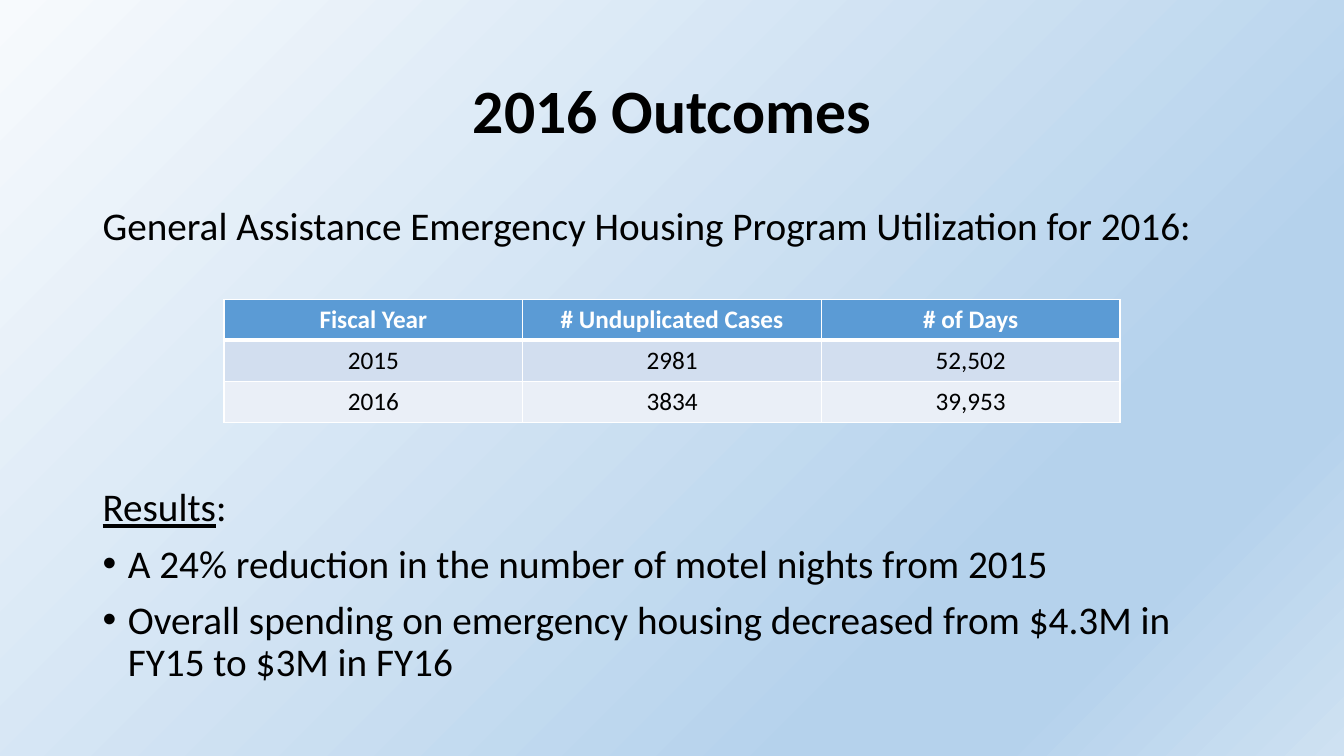
from lxml.etree import SubElement
from pptx import Presentation
from pptx.dml.color import RGBColor
from pptx.enum.text import MSO_ANCHOR as Anchor, PP_ALIGN as Align
from pptx.oxml.ns import qn
from pptx.util import Emu, Inches, Pt

COLORS = {
    "text": "000000", "white": "FFFFFF", "header": "5B9BD5",
    "odd_row": "D2DEEF", "even_row": "EAEFF7",
    "sky_light": "F7FAFD", "sky": "B5D2EC", "sky_end": "CEE1F2",
}
SKY_STOPS = [(0, "sky_light"), (74, "sky"), (83, "sky"), (100, "sky_end")]
CASES = [
    ["Fiscal Year", "# Unduplicated Cases", "# of Days"],
    ["2015", "2981", "52,502"],
    ["2016", "3834", "39,953"],
]
RESULTS = [
    "A 24% reduction in the number of motel nights from 2015",
    "Overall spending on emergency housing decreased from $4.3M in FY15 to $3M in FY16",
]


def add_text(paragraph, text, size=28, color="text", bold=False, underline=False):
    run = paragraph.add_run()
    run.text = text
    font = run.font
    font.name, font.size = "Calibri", Pt(size)
    font.bold, font.underline = bold, underline
    font.color.rgb = RGBColor.from_string(COLORS[color])


def add_bullet(paragraph):
    properties = paragraph._p.get_or_add_pPr()
    properties.set("marL", str(Inches(0.25)))
    properties.set("indent", str(-Inches(0.25)))
    SubElement(properties, qn("a:buFont"), typeface="Arial")
    SubElement(properties, qn("a:buChar"), char="•")


def add_border(cell, side, width):
    line = SubElement(cell._tc.get_or_add_tcPr(), qn(f"a:ln{side}"), w=str(Pt(width)))
    fill = SubElement(line, qn("a:solidFill"))
    SubElement(fill, qn("a:srgbClr"), val=COLORS["white"])


class SlideBuilder:
    """Places elements by percentages of the slide's width and height."""

    def __init__(self, presentation):
        self.width, self.height = presentation.slide_width, presentation.slide_height
        self.slide = presentation.slides.add_slide(presentation.slide_layouts[5])

    def area(self, left, top, width, height):
        return (Emu(int(self.width * left / 100)), Emu(int(self.height * top / 100)),
                Emu(int(self.width * width / 100)), Emu(int(self.height * height / 100)))

    def background(self, stops):
        fill = self.slide.background.fill
        fill.gradient()
        fill.gradient_angle = 315
        stop_list = self.slide.element.find(".//" + qn("a:gsLst"))
        stop_list.clear()
        for position, color in stops:
            stop = SubElement(stop_list, qn("a:gs"), pos=str(position * 1000))
            SubElement(stop, qn("a:srgbClr"), val=COLORS[color])

    def title(self, text, *area):
        shape = self.slide.shapes.title
        shape.left, shape.top, shape.width, shape.height = self.area(*area)
        shape.text_frame.vertical_anchor = Anchor.MIDDLE
        paragraph = shape.text_frame.paragraphs[0]
        paragraph.alignment, paragraph.line_spacing = Align.CENTER, 0.9
        add_text(paragraph, text, size=44, bold=True)

    def text_box(self, count, *area):
        """Add a box and return its evenly spaced, empty paragraphs."""
        frame = self.slide.shapes.add_textbox(*self.area(*area)).text_frame
        frame.word_wrap = True
        for _ in range(count - 1):
            frame.add_paragraph()
        for paragraph in frame.paragraphs:
            paragraph.alignment = Align.LEFT
            paragraph.line_spacing, paragraph.space_before = 0.9, Pt(10)
        return frame.paragraphs

    def table(self, rows, *area):
        table = self.slide.shapes.add_table(
            len(rows), len(rows[0]), *self.area(*area)).table
        table.horz_banding = False
        for row, values in enumerate(rows):
            is_header = row == 0
            fill = "header" if is_header else "odd_row" if row % 2 else "even_row"
            for column, value in enumerate(values):
                cell = table.cell(row, column)
                for side in "LRTB":
                    heavy = (row, side) in [(0, "B"), (1, "T")]
                    add_border(cell, side, 3 if heavy else 1)
                cell.fill.solid()
                cell.fill.fore_color.rgb = RGBColor.from_string(COLORS[fill])
                paragraph = cell.text_frame.paragraphs[0]
                paragraph.alignment = Align.CENTER
                add_text(paragraph, value, size=18, bold=is_header,
                         color="white" if is_header else "text")


def main():
    presentation = Presentation()
    presentation.slide_width, presentation.slide_height = Inches(13.33), Inches(7.5)
    builder = SlideBuilder(presentation)
    left, width = 6.9, 86.25

    # Background and heading
    builder.background(SKY_STOPS)
    builder.title("2016 Outcomes", left, 5.33, width, 19.33)

    # Introduction and table
    intro, = builder.text_box(1, left, 26.67, width, 8)
    add_text(intro, "General Assistance Emergency Housing Program Utilization for 2016:")
    builder.table(CASES, 16.67, 39.6, 66.67, 16.25)

    # Results
    heading, *bullets = builder.text_box(1 + len(RESULTS), left, 63.87, width, 31.87)
    add_text(heading, "Results", underline=True)
    add_text(heading, ":")
    for paragraph, result in zip(bullets, RESULTS):
        add_bullet(paragraph)
        add_text(paragraph, result)

    presentation.save("out.pptx")


if __name__ == "__main__":
    main()
